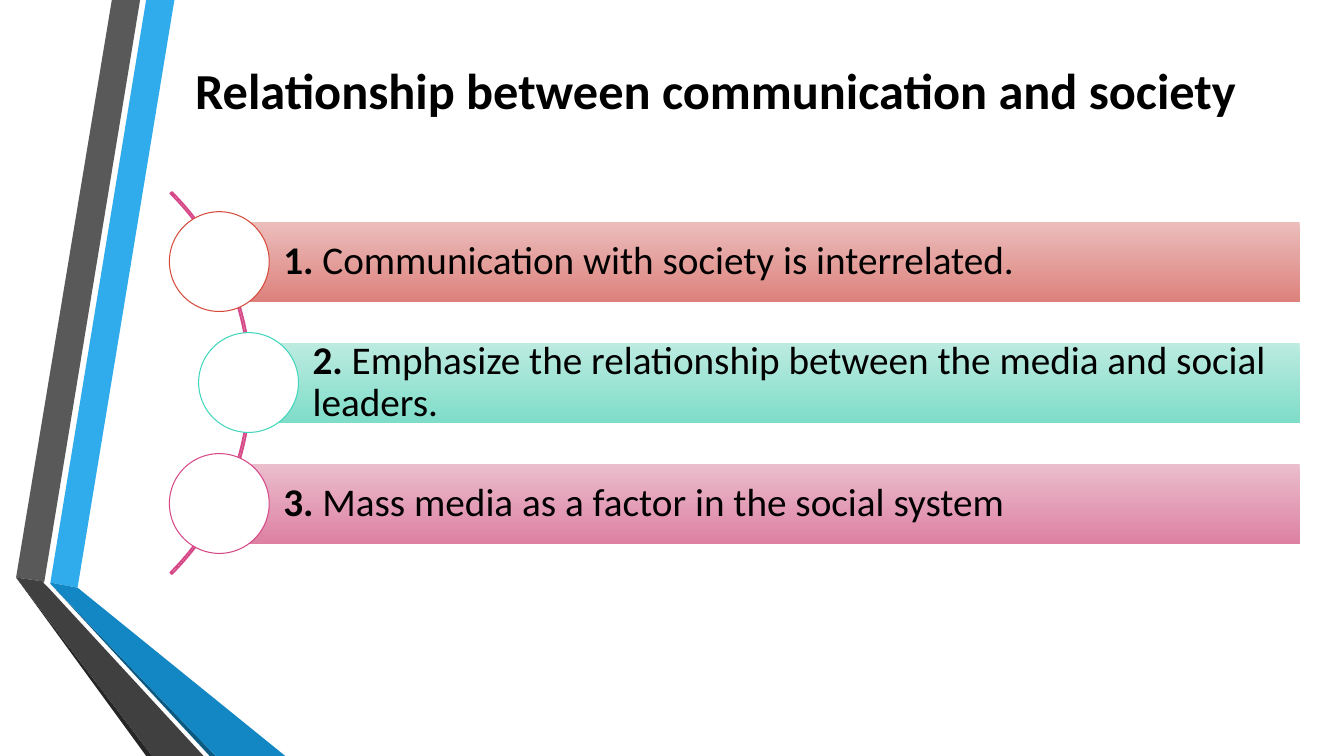
from dataclasses import dataclass

import pptx
import pptx.dml.color
import pptx.enum.shapes
import pptx.enum.text
import pptx.util

PX = 9144  # EMU per px, 100 px to the inch
FONT = "Calibri"
HUES = {
    "black": "000000", "white": "FFFFFF",
    "sky": "30ACEC", "blue": "1287C3", "navy": "0C5A82",
    "gray": "595959", "dark": "404040", "coal": "262626",
    "red": "D64A3B", "red top": "EBBEBC", "red low": "DD817C",
    "teal": "41D6BC", "teal top": "BDEBE0", "teal low": "7EDDC9",
    "pink": "D64787", "pink top": "EBBECD", "pink low": "DD80A2",
}
MID, STEP = 380, 120  # centre and pitch of the rows
BAR, DISC, EDGE = 80, 99, 1289  # bar height, disc size, right end of bars
ARC = 536
KIND = pptx.enum.shapes.MSO_SHAPE


@dataclass
class Band:
    hue: str
    pts: list[tuple[int, int]]


@dataclass
class Row:
    hue: str
    left: int
    mark: str
    text: str


BANDS = [
    Band("sky", [(50, 578), (77, 583), (173, 0), (145, 0)]),
    Band("gray", [(139, 0), (111, 0), (16, 573), (44, 577)]),
    Band("coal", [(16, 573), (145, 750), (151, 750)]),
    Band("navy", [(50, 579), (208, 750), (214, 750)]),
    Band("blue", [(50, 579), (214, 750), (283, 750), (77, 583), (50, 578)]),
    Band("dark", [(202, 750), (48, 583), (43, 578), (44, 577), (16, 573), (151, 750)]),
]
ROWS = [
    Row("red", 218, "1. ", "Communication with society is interrelated."),
    Row("teal", 247, "2. ",
        "Emphasize the relationship between the media and social leaders."),
    Row("pink", 218, "3. ", "Mass media as a factor in the social system"),
]


def color(hue: str) -> pptx.dml.color.RGBColor:
    return pptx.dml.color.RGBColor.from_string(HUES[hue])


def add_run(para, text: str, size: int, bold: bool) -> None:
    run = para.add_run()
    run.text = text
    font = run.font
    font.name, font.size, font.bold = FONT, pptx.util.Pt(size), bold
    font.color.rgb = color("black")


def add_box(slide, kind, left: int, top: int, wide: int, high: int):
    box = slide.shapes.add_shape(kind, left * PX, top * PX, wide * PX, high * PX)
    box.shadow.inherit = False
    return box


def add_line(box, hue: str, width: float) -> None:
    box.line.color.rgb = color(hue)
    box.line.width = pptx.util.Pt(width)


def add_band(slide, band: Band) -> None:
    pen = slide.shapes.build_freeform(*band.pts[0], scale=PX)
    pen.add_line_segments(band.pts[1:], close=True)
    form = pen.convert_to_shape()
    form.shadow.inherit = False
    form.fill.solid()
    form.fill.fore_color.rgb = color(band.hue)
    form.line.fill.background()


def add_title(slide, text: str) -> None:
    title = slide.shapes.title
    title.left, title.top = 162 * PX, 23 * PX
    title.width, title.height = 1096 * PX, 131 * PX
    frame = title.text_frame
    frame.word_wrap = True
    frame.auto_size = pptx.enum.text.MSO_AUTO_SIZE.NONE
    frame.vertical_anchor = pptx.enum.text.MSO_ANCHOR.MIDDLE
    para = frame.paragraphs[0]
    para.alignment = pptx.enum.text.PP_ALIGN.CENTER
    add_run(para, text, 36, True)


def add_arc(slide) -> None:
    arc = add_box(slide, KIND.BLOCK_ARC, -287, MID - ARC // 2, ARC, ARC)
    for i, value in enumerate((189, 27, 0.004)):
        arc.adjustments[i] = value
    arc.fill.background()
    add_line(arc, "pink", 1.25)


def add_row(slide, row: Row, mid: int) -> None:
    # Bar with its text
    bar = add_box(slide, KIND.RECTANGLE, row.left, mid - BAR // 2, EDGE - row.left, BAR)
    bar.line.fill.background()
    bar.fill.gradient()
    bar.fill.gradient_angle = 270
    for stop, place, end in zip(bar.fill.gradient_stops, (0, 1), ("top", "low")):
        stop.position = place
        stop.color.rgb = color(f"{row.hue} {end}")
    frame = bar.text_frame
    frame.word_wrap = True
    frame.vertical_anchor = pptx.enum.text.MSO_ANCHOR.MIDDLE
    frame.margin_left = 63 * PX
    frame.margin_right = frame.margin_top = frame.margin_bottom = 8 * PX
    para = frame.paragraphs[0]
    para.alignment = pptx.enum.text.PP_ALIGN.LEFT
    para.line_spacing = 0.9
    add_run(para, row.mark, 28, True)
    add_run(para, row.text, 28, False)

    # Disc on the left end
    disc = add_box(slide, KIND.OVAL, row.left - DISC // 2 - 1, mid - DISC // 2 - 1, DISC, DISC)
    disc.fill.solid()
    disc.fill.fore_color.rgb = color("white")
    add_line(disc, row.hue, 0.75)


def main() -> None:
    deck = pptx.Presentation()
    deck.slide_width, deck.slide_height = 1333 * PX, 750 * PX
    slide = deck.slides.add_slide(deck.slide_layouts[5])

    # Folded ribbons on the left
    for band in BANDS:
        add_band(slide, band)

    add_title(slide, "Relationship between communication and society")

    # Curved list
    add_arc(slide)
    for i, row in enumerate(ROWS):
        add_row(slide, row, MID + (i - 1) * STEP)

    deck.save("out.pptx")


if __name__ == "__main__":
    main()
